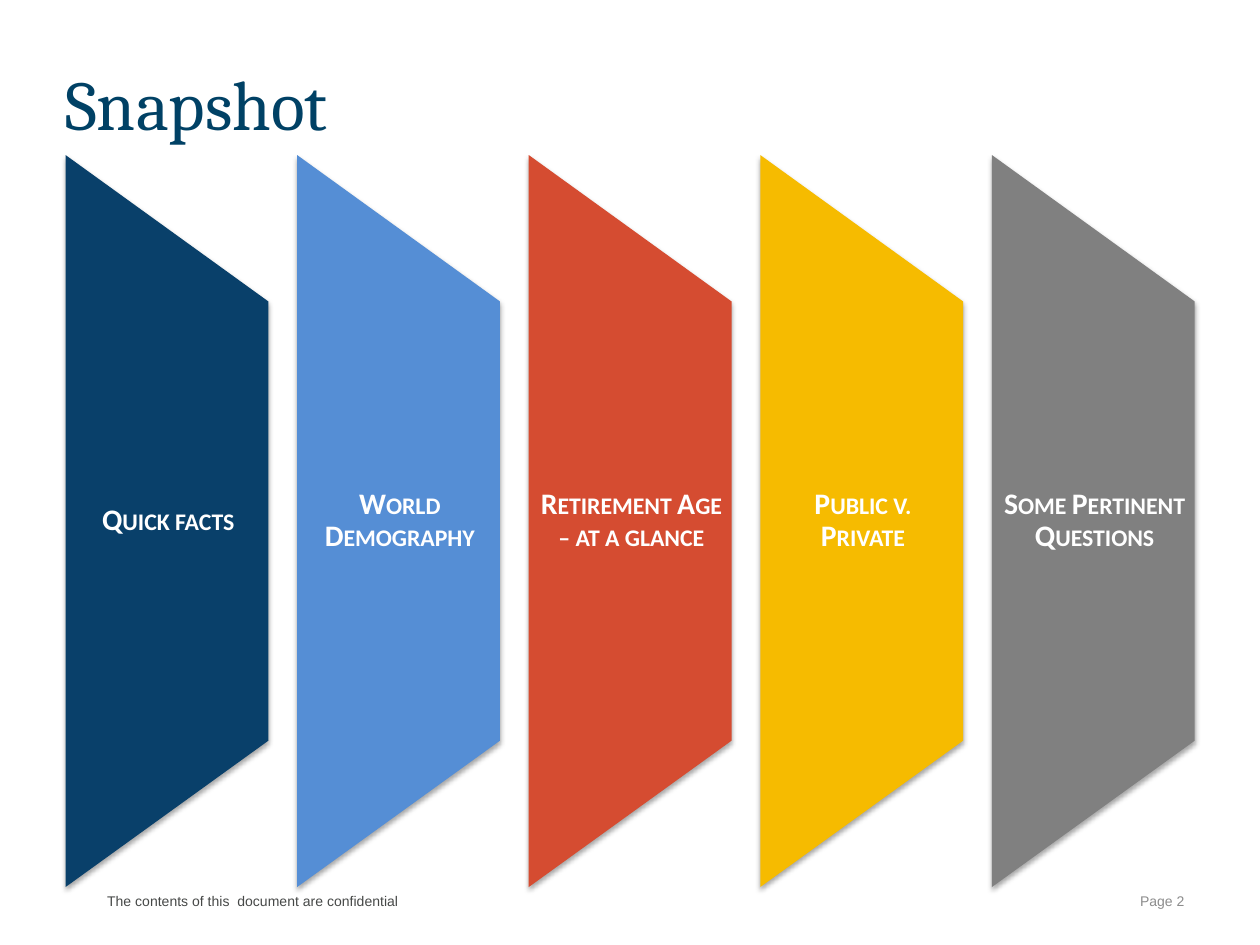
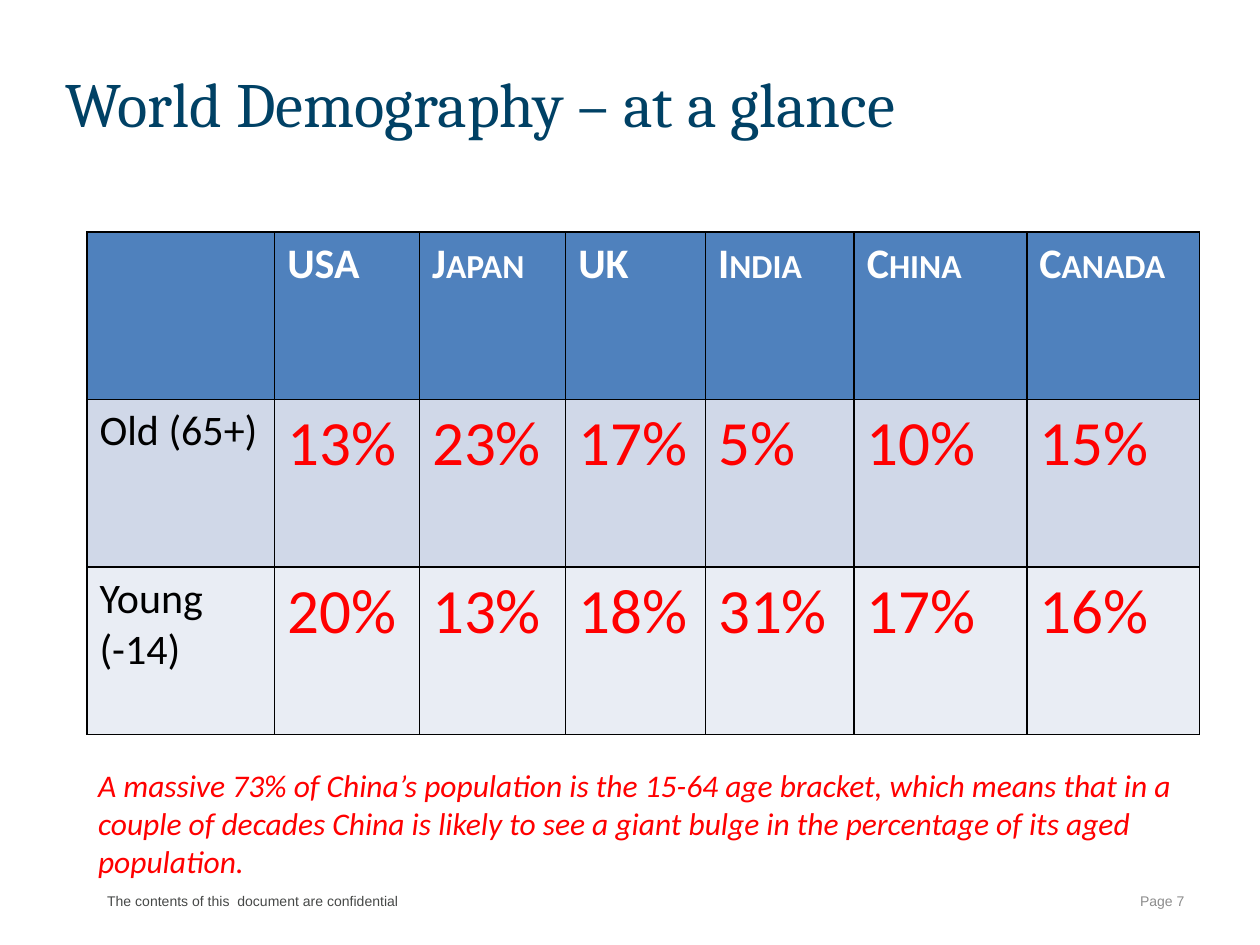
"""Build two slides: a five-panel agenda and a table of age shares by country."""
from dataclasses import dataclass
from typing import NamedTuple

from lxml.etree import SubElement
from pptx import Presentation
from pptx.dml.color import RGBColor
from pptx.enum.shapes import MSO_SHAPE as Preset
from pptx.enum.text import MSO_ANCHOR as Anchor, PP_ALIGN as Align
from pptx.oxml.ns import qn
from pptx.util import Inches, Pt

COLUMNS, ROWS = 100, 75
UNIT = Inches(0.1)


@dataclass(frozen=True)
class Theme:
    """Colours, fonts and type sizes of the deck."""
    title: str = "004165"
    footer: str = "464847"
    page: str = "8C8C8C"
    white: str = "FFFFFF"
    black: str = "000000"
    accent: str = "FF0000"
    header: str = "4F81BD"
    bands: tuple = ("D0D8E8", "E9EDF4")
    panels: tuple = ("09406A", "558ED5", "D54C31", "F6BB00", "808080")
    serif: str = "Cambria"
    body: str = "Calibri"
    sans: str = "Arial"
    small_size: int = 8
    panel_size: int = 17
    note_size: int = 18
    label_size: int = 24
    value_size: int = 36
    title_sizes: tuple = (40, 36)


class Box(NamedTuple):
    """A rectangle in grid columns and rows."""
    left: float
    top: float
    width: float
    height: float

    def lengths(self):
        """Return the rectangle in slide units."""
        return [round(value * UNIT) for value in self]


class Style(NamedTuple):
    """The look of one paragraph."""
    name: str
    size: int
    color: str
    bold: bool = False
    italic: bool = False
    small_caps: bool = False


THEME = Theme()
FOOTER = "The contents of this  document are confidential"
TITLE_BOX = Box(4.2, 5.5, 82.8, 5.2)
FOOTER_BOX = Box(8.5, 70.8, 37.5, 2.3)
PAGE_BOX = Box(71.7, 69.5, 23.3, 4)
TABLE_BOX = Box(6.9, 18.4, 88.1, 39.9)
NOTE_BOX = Box(6.8, 60.3, 88.1, 10.1)
FIRST_PANEL = Box(5.2, 12.3, 16.1, 58.1)
PANEL_PITCH = 18.38
LABEL_WIDTH = 17.1
COUNTRY_WIDTHS = (14.9, 11.5, 11.6, 11.1, 11.8, 13.7, 13.7)
HEADER_STYLE = Style(THEME.body, THEME.label_size, THEME.white, bold=True, small_caps=True)
LABEL_STYLE = Style(THEME.body, THEME.label_size, THEME.black)
VALUE_STYLE = Style(THEME.body, THEME.value_size, THEME.accent)


def write(paragraph, text, style):
    """Put styled text in a paragraph."""
    paragraph.text = text
    font = paragraph.font
    font.name, font.size = style.name, Pt(style.size)
    font.bold, font.italic = style.bold, style.italic
    font.color.rgb = RGBColor.from_string(style.color)
    if style.small_caps:
        font._element.set("cap", "small")


def add_text(slide, box, text, style, align=Align.LEFT, anchor=Anchor.TOP, margins=None):
    """Add a wrapping text box and return its paragraph."""
    frame = slide.shapes.add_textbox(*box.lengths()).text_frame
    frame.word_wrap, frame.vertical_anchor = True, anchor
    if margins is not None:
        frame.margin_left = frame.margin_right = Inches(margins)
        frame.margin_top = frame.margin_bottom = 0
    paragraph = frame.paragraphs[0]
    write(paragraph, text, style)
    paragraph.alignment = align
    return paragraph


def add_page(presentation, title, title_size, number):
    """Add a blank slide with its title, footer and page number."""
    slide = presentation.slides.add_slide(presentation.slide_layouts[6])
    add_text(slide, FOOTER_BOX, FOOTER,
             Style(THEME.sans, THEME.small_size, THEME.footer), margins=0)
    add_text(slide, TITLE_BOX, title,
             Style(THEME.serif, title_size, THEME.title), anchor=Anchor.MIDDLE)
    add_text(slide, PAGE_BOX, f"Page {number}",
             Style(THEME.sans, THEME.small_size, THEME.page), Align.RIGHT, Anchor.MIDDLE)
    return slide


def add_soft_shadow(shape):
    """Give a shape a faint shadow straight below it."""
    shape.shadow.inherit = False
    effects = shape._element.spPr.find(qn("a:effectLst"))
    shadow = SubElement(effects, qn("a:outerShdw"), blurRad=str(Pt(3.1)),
                        dist=str(Pt(1.8)), dir="5400000", rotWithShape="0")
    color = SubElement(shadow, qn("a:srgbClr"), val=THEME.black)
    SubElement(color, qn("a:alpha"), val="35000")


def add_panel(slide, box, text, color):
    """Add a panel tapering to the right, with a centred label."""
    center_x, center_y = box.left + box.width / 2, box.top + box.height / 2
    unturned = Box(center_x - box.height / 2, center_y - box.width / 2,
                   box.height, box.width)
    panel = slide.shapes.add_shape(Preset.FLOWCHART_MANUAL_OPERATION, *unturned.lengths())
    panel.rotation = 270
    panel.fill.solid()
    panel.fill.fore_color.rgb = RGBColor.from_string(color)
    panel.line.fill.background()
    add_soft_shadow(panel)
    label_box = Box(center_x - LABEL_WIDTH / 2 + 0.1, box.top + box.height / 5,
                    LABEL_WIDTH, box.height * 3 / 5)
    label = add_text(slide, label_box, text,
                     Style(THEME.body, THEME.panel_size, THEME.white, bold=True, small_caps=True),
                     Align.CENTER, Anchor.MIDDLE, margins=0.12)
    label.line_spacing = 0.9


def fill_cell(cell, text, style, color):
    """Write a table cell with a black border and a plain fill."""
    properties = cell._tc.get_or_add_tcPr()
    for side in ("lnL", "lnR", "lnT", "lnB"):
        line = SubElement(properties, qn(f"a:{side}"), w=str(Pt(1)))
        solid = SubElement(line, qn("a:solidFill"))
        SubElement(solid, qn("a:srgbClr"), val=THEME.black)
    cell.fill.solid()
    cell.fill.fore_color.rgb = RGBColor.from_string(color)
    write(cell.text_frame.paragraphs[0], text, style)


def add_table(slide, box, widths, header, records):
    """Add a table with a header row and banded records."""
    rows = [header, *records]
    table = slide.shapes.add_table(len(rows), len(header), *box.lengths()).table
    for column, width in zip(table.columns, widths):
        column.width = round(width * UNIT)
    for row_index, row in enumerate(rows):
        color = THEME.bands[(row_index - 1) % 2] if row_index else THEME.header
        for column_index, text in enumerate(row):
            body_style = VALUE_STYLE if column_index else LABEL_STYLE
            style = body_style if row_index else HEADER_STYLE
            fill_cell(table.cell(row_index, column_index), text, style, color)


def build_snapshot(presentation):
    """Build the agenda slide."""
    slide = add_page(presentation, "Snapshot", THEME.title_sizes[0], 2)
    topics = ("Quick facts", "World Demography", "Retirement Age – at a glance",
              "Public v. Private", "Some Pertinent Questions")
    for index, (topic, color) in enumerate(zip(topics, THEME.panels)):
        box = FIRST_PANEL._replace(left=FIRST_PANEL.left + index * PANEL_PITCH)
        add_panel(slide, box, topic, color)


def build_demography(presentation):
    """Build the slide of age shares by country."""
    slide = add_page(presentation, "World Demography – at a glance", THEME.title_sizes[1], 7)
    add_table(slide, TABLE_BOX, COUNTRY_WIDTHS,
              ("", "USA", "Japan", "UK", "India", "China", "Canada"),
              [("Old (65+)", "13%", "23%", "17%", "5%", "10%", "15%"),
               ("Young (-14)", "20%", "13%", "18%", "31%", "17%", "16%")])
    add_text(slide, NOTE_BOX,
             "A massive 73% of China’s population is the 15-64 age bracket, which means "
             "that in a couple of decades China is likely to see a giant bulge in the "
             "percentage of its aged population.",
             Style(THEME.body, THEME.note_size, THEME.accent, italic=True))


def main():
    """Build and save the deck."""
    presentation = Presentation()
    presentation.slide_width, presentation.slide_height = COLUMNS * UNIT, ROWS * UNIT
    build_snapshot(presentation)
    build_demography(presentation)
    presentation.save("out.pptx")


if __name__ == "__main__":
    main()
